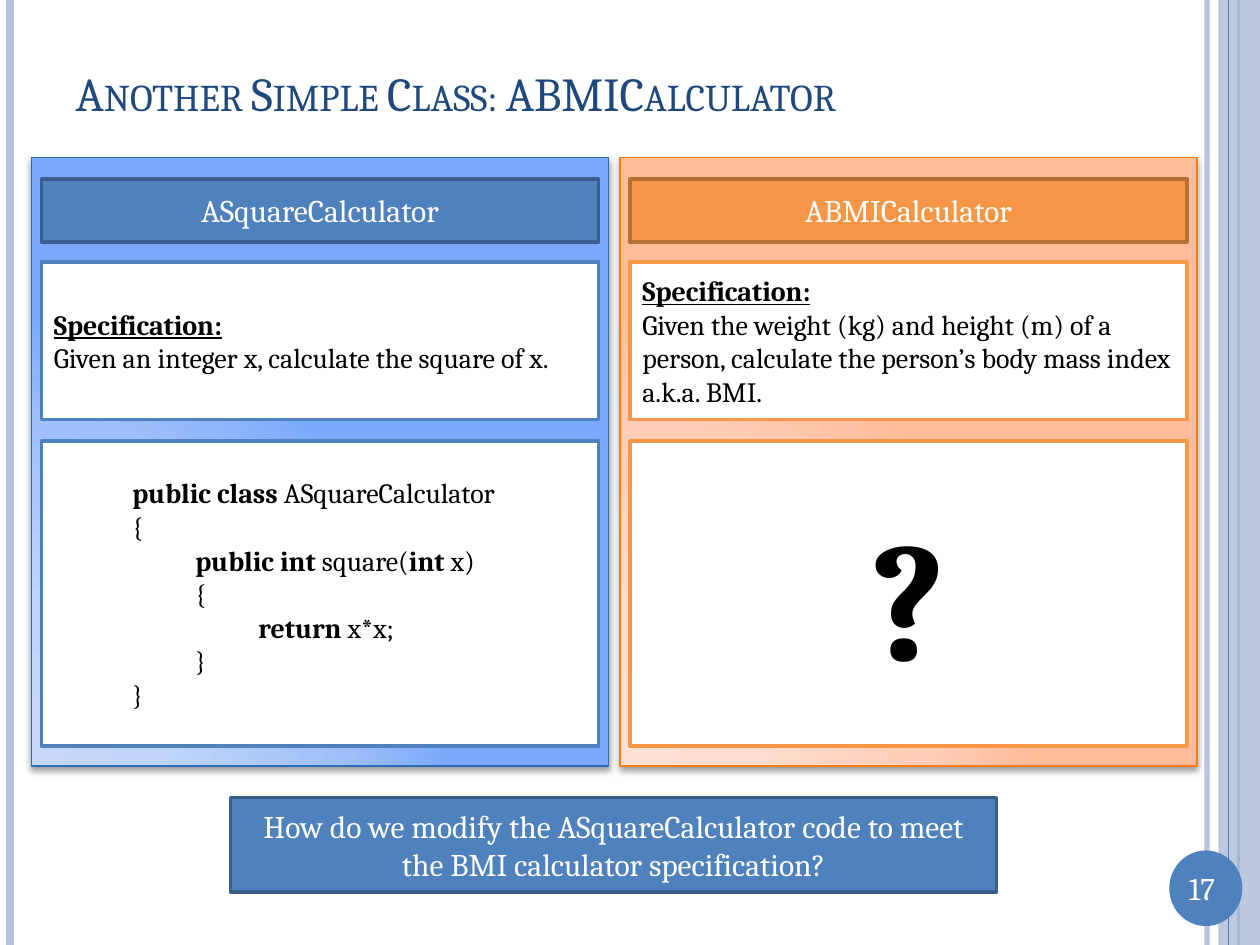
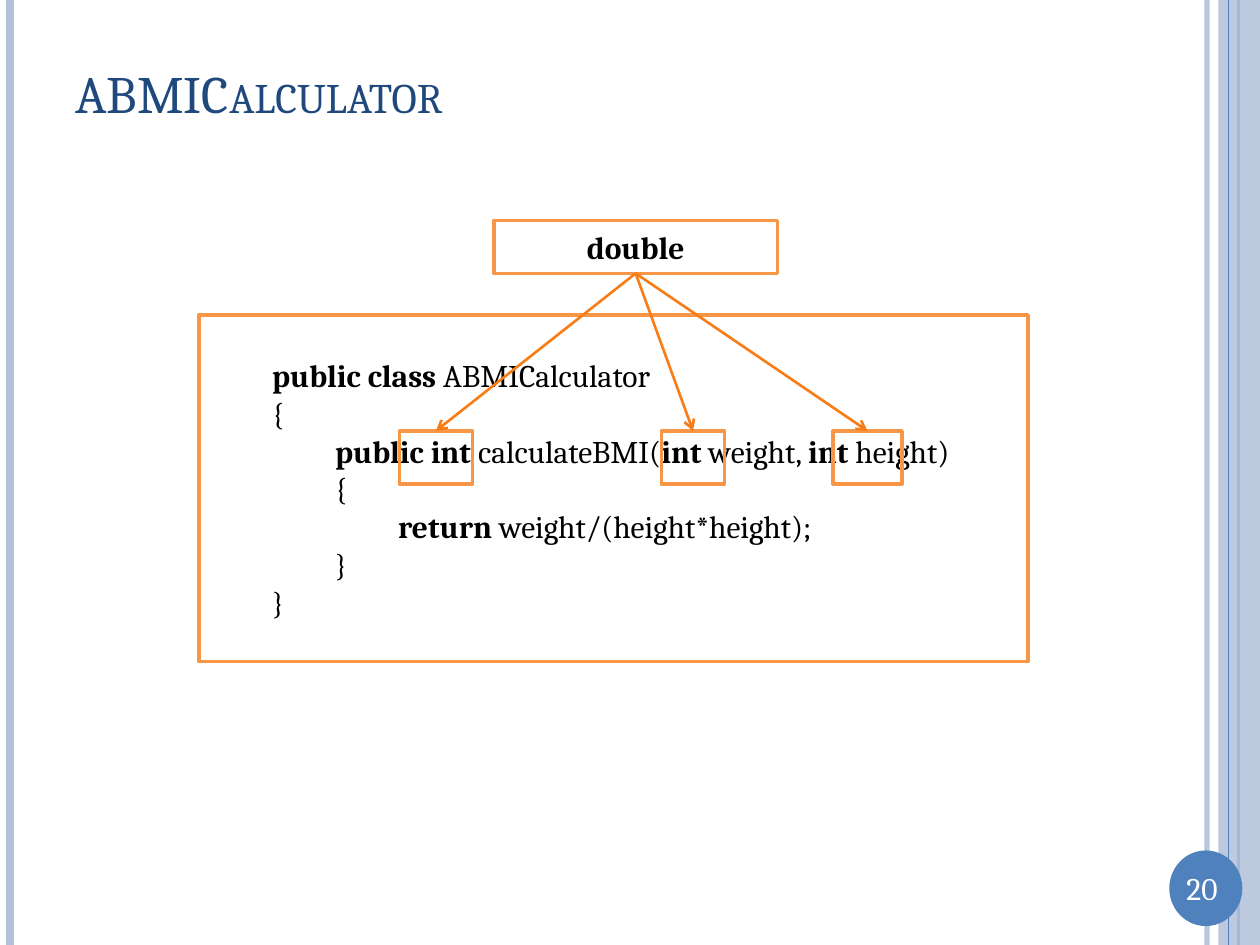
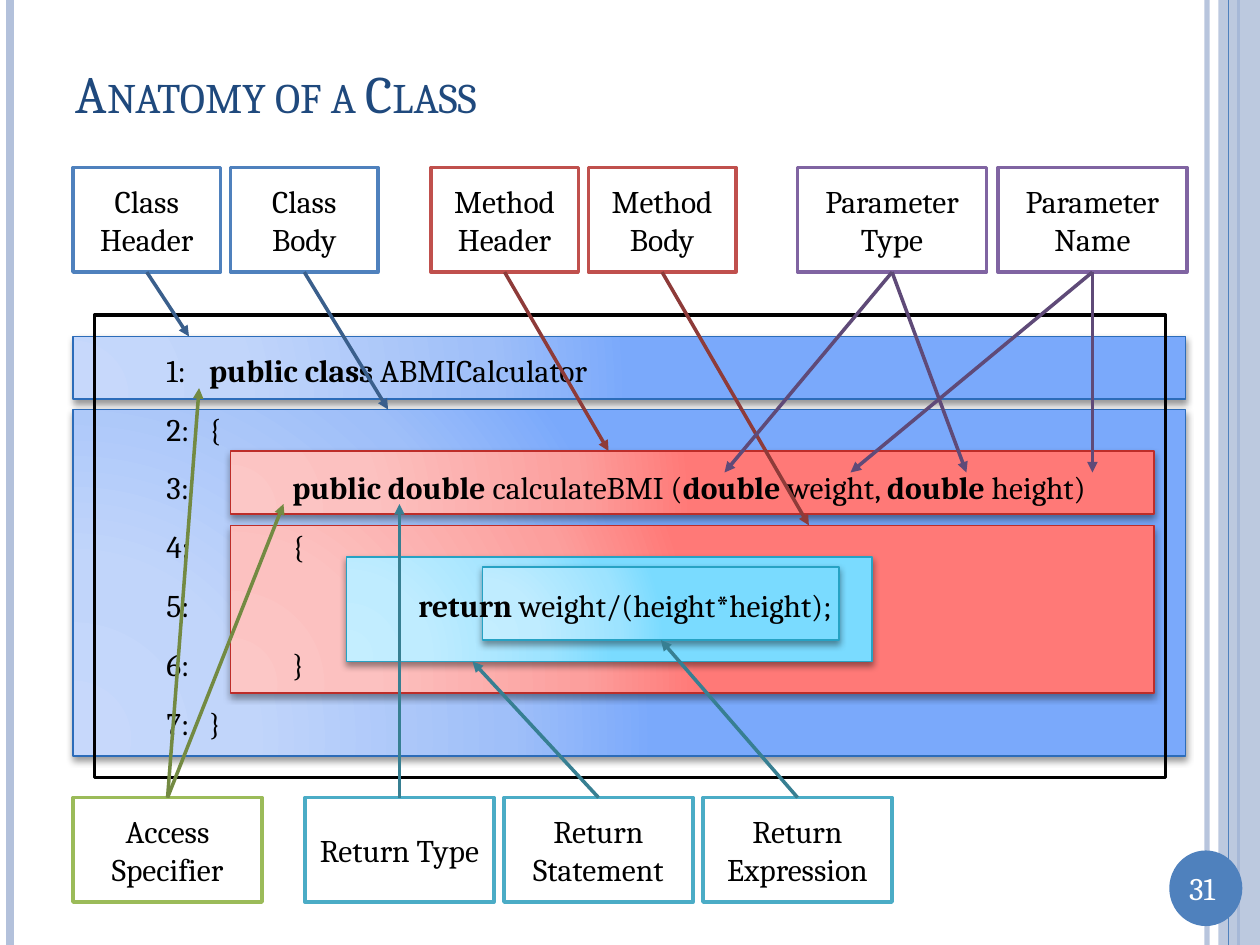
from lxml import etree
from pptx import Presentation
from pptx import util as u
from pptx.dml.color import RGBColor
from pptx.enum import shapes, text
from pptx.oxml import parse_xml
from pptx.oxml.ns import nsdecls, qn


class Theme:
    font = "Cambria"
    black, white = "000000", "FFFFFF"
    title, band = "1F497D", "B3C1DB"
    blue, blue_dark = "4F81BD", "3A5F8C"
    orange, orange_dark, orange_arrow = "F79646", "B76F34", "F97D16"
    red, red_dark = "C0504D", "8E3B39"
    purple, purple_dark = "8064A2", "5F4A78"
    green, green_dark = "9BBB59", "738A42"
    teal, teal_dark = "4BACC6", "377F92"
    gloss_blue = (("C7D8FB", "C1D5FA", "9FBFF9", "7AA9FB"), "2C6CB9")
    gloss_orange = (("FFE0D3", "FFDDCF", "FFCCB5", "FFBC99"), "F97D16")
    gloss_red = (("FCC7C6", "FCC1C0", "FC9F9D", "FF7977"), "BD2D29")
    gloss_teal = (("C4EEFF", "BFECFF", "9DE3FF", "7ADBFF"), "26A2C4")
    body, small, huge = 18, 16, 96
    border = 2


BAND_LINES = [(9.58, Theme.band, 3, 93), (0.08, Theme.band, 4.5, 100),
              (9.83, Theme.blue, 1.5, 100), (9.75, Theme.blue, 0.75, 100)]

SQUARE_CODE = [
    (0, "**public class** ASquareCalculator"), (0, "{"),
    (0.5, "**public int** square(**int** x)"), (0.5, "{"),
    (1, "**return** x*x;"), (0.5, "}"), (0, "}")]
BMI_CODE = [
    (0, "**public class** ABMICalculator"), (0, "{"),
    (0.5, "**public int** calculateBMI(**int** weight, **int** height)"), (0.5, "{"),
    (1, "**return** weight/(height*height);"), (0.5, "}"), (0, "}")]
ANATOMY_CODE = [
    (0.34, "**public class** ABMICalculator"), (0.34, "{"),
    (1, "**public double** calculateBMI (**double** weight, **double** height)"), (1, "{"),
    (2, "**return** weight/(height*height);"), (1, "}"), (0.34, "}")]

PANELS = [
    (0.25, Theme.gloss_blue, Theme.blue, Theme.blue_dark, "ASquareCalculator",
     "Given an integer x, calculate the square of x."),
    (4.92, Theme.gloss_orange, Theme.orange, Theme.orange_dark, "ABMICalculator",
     "Given the weight (kg) and height (m) of a person, calculate the person’s "
     "body mass index a.k.a. BMI.")]
QUESTION = "How do we modify the ASquareCalculator code to meet the BMI calculator specification?"

TYPE_MARKERS = [(5.25, 0.5), (3.17, 0.58), (6.61, 0.55)]

ANATOMY_AREAS = [
    (0.58, 2.67, 8.83, 0.5, Theme.gloss_blue), (0.58, 3.25, 8.83, 2.75, Theme.gloss_blue),
    (1.83, 3.58, 7.33, 0.5, Theme.gloss_red), (1.83, 4.17, 7.33, 1.33, Theme.gloss_red),
    (2.75, 4.42, 4.17, 0.83, Theme.gloss_teal), (3.83, 4.5, 2.83, 0.58, Theme.gloss_teal)]
TOP, BOTTOM = 1.33, 6.33
ANATOMY_LABELS = [
    ("Class Header", 0.58, TOP, 1.17, Theme.blue, Theme.blue_dark, [(1.5, 2.67)]),
    ("Class Body", 1.83, TOP, 1.17, Theme.blue, Theme.blue_dark, [(3.08, 3.25)]),
    ("Method Header", 3.42, TOP, 1.17, Theme.red, Theme.red_dark, [(4.83, 3.58)]),
    ("Method Body", 4.67, TOP, 1.17, Theme.red, Theme.red_dark, [(6.42, 4.17)]),
    ("Parameter Type", 6.33, TOP, 1.5, Theme.purple, Theme.purple_dark,
     [(5.75, 3.75), (7.67, 3.75)]),
    ("Parameter Name", 7.92, TOP, 1.5, Theme.purple, Theme.purple_dark,
     [(8.67, 3.75), (6.75, 3.75)]),
    ("Access Specifier", 0.58, BOTTOM, 1.5, Theme.green, Theme.green_dark,
     [(1.58, 3.08), (2.25, 4)]),
    ("Return Type", 2.42, BOTTOM, 1.5, Theme.teal, Theme.teal_dark, [(3.17, 4)]),
    ("Return Statement", 4, BOTTOM, 1.5, Theme.teal, Theme.teal_dark, [(3.75, 5.25)]),
    ("Return Expression", 5.58, BOTTOM, 1.5, Theme.teal, Theme.teal_dark, ["expression"])]


def rgb(color):
    return RGBColor.from_string(color)


def inches(*lengths):
    return [u.Inches(length) for length in lengths]


def set_opacity(parent, percent):
    color = next(parent.iter(qn("a:srgbClr")))
    etree.SubElement(color, qn("a:alpha"), val=str(percent * 1000))


def style_paragraph(paragraph, size, color, align=text.PP_ALIGN.LEFT):
    paragraph.alignment = align
    paragraph.font.name = Theme.font
    paragraph.font.size = u.Pt(size)
    paragraph.font.color.rgb = rgb(color)


def add_marked_runs(paragraph, content):
    for index, part in enumerate(content.split("**")):
        if part:
            run = paragraph.add_run()
            run.text = part
            if index % 2:
                run.font.bold = True


def write(shape, lines, size=Theme.body, color=Theme.black, align=text.PP_ALIGN.CENTER):
    frame = shape.text_frame
    frame.word_wrap = True
    frame.vertical_anchor = text.MSO_ANCHOR.MIDDLE
    for index, line in enumerate(lines):
        paragraph = frame.add_paragraph() if index else frame.paragraphs[0]
        add_marked_runs(paragraph, line)
        style_paragraph(paragraph, size, color, align)
    return frame.paragraphs


def write_code(shape, code, size, left_margin):
    paragraphs = write(shape, [line for _, line in code], size, align=text.PP_ALIGN.LEFT)
    shape.text_frame.margin_left = u.Inches(left_margin)
    for paragraph, (indent, _) in zip(paragraphs, code):
        properties = paragraph._p.get_or_add_pPr()
        properties.set("marL", str(u.Inches(indent)))
        properties.set("indent", "0")


def write_numbered_code(shape, code, left_margin):
    lines = [f"{number}:\t{line}" for number, (_, line) in enumerate(code, 1)]
    paragraphs = write(shape, lines, align=text.PP_ALIGN.LEFT)
    shape.text_frame.margin_left = u.Inches(left_margin)
    for index, (paragraph, (stop, _)) in enumerate(zip(paragraphs, code)):
        if index:
            paragraph.space_before = u.Pt(12)
        tabs = parse_xml(f'<a:tabLst {nsdecls("a")}><a:tab pos="{u.Inches(stop)}" algn="l"/></a:tabLst>')
        paragraph._p.pPr.find(qn("a:defRPr")).addprevious(tabs)


def add_box(slide, left, top, width, height, fill=None, line=None,
            kind=shapes.MSO_SHAPE.RECTANGLE, weight=Theme.border):
    shape = slide.shapes.add_shape(kind, *inches(left, top, width, height))
    shape.shadow.inherit = False
    if fill:
        shape.fill.solid()
        shape.fill.fore_color.rgb = rgb(fill)
    else:
        shape.fill.background()
    if line:
        shape.line.color.rgb = rgb(line)
        shape.line.width = u.Pt(weight)
    else:
        shape.line.fill.background()
    return shape


def add_glossy_box(slide, left, top, width, height, gloss):
    colors, line = gloss
    shape = add_box(slide, left, top, width, height, colors[0], line, weight=1)
    stops = "".join(f'<a:gs pos="{position * 1000}"><a:srgbClr val="{color}"/></a:gs>'
                    for position, color in zip((0, 30, 75, 100), colors))
    gradient = parse_xml(
        f'<a:gradFill {nsdecls("a")} rotWithShape="1"><a:gsLst>{stops}</a:gsLst>'
        '<a:path path="circle"><a:fillToRect l="5000" t="100000" r="120000" b="10000"/>'
        '</a:path></a:gradFill>')
    properties = shape._element.spPr
    properties.replace(properties.find(qn("a:solidFill")), gradient)
    properties.find(qn("a:effectLst")).append(parse_xml(
        f'<a:outerShdw {nsdecls("a")} blurRad="{u.Pt(4)}" dist="{u.Pt(2)}" dir="5400000" '
        'rotWithShape="0"><a:srgbClr val="000000"><a:alpha val="40000"/></a:srgbClr></a:outerShdw>'))
    return shape


def add_line(slide, start, end, color, weight, head=None):
    connector = slide.shapes.add_connector(shapes.MSO_CONNECTOR.STRAIGHT, *inches(*start, *end))
    connector.line.color.rgb = rgb(color)
    connector.line.width = u.Pt(weight)
    properties = connector._element.spPr
    if head:
        etree.SubElement(properties.find(qn("a:ln")), qn("a:tailEnd"), type=head)
    etree.SubElement(properties, qn("a:effectLst"))
    return connector


def decorate_layout(slide, layout):
    lines = []
    for left, color, weight, opacity in BAND_LINES:
        line = add_line(slide, (left, 0), (left, 7.5), color, weight)
        if opacity < 100:
            set_opacity(line._element.spPr, opacity)
        lines.append(line)
    band = add_box(slide, 9.67, 0, 0.33, 7.5, Theme.band)
    set_opacity(band._element.spPr, 87)
    badge = add_box(slide, 9.28, 6.75, 0.58, 0.6, Theme.blue, kind=shapes.MSO_SHAPE.OVAL)
    for shape in (*lines[:3], band, lines[3], badge):
        layout.shapes._spTree.append(shape._element)


def add_slide(presentation, title, number, title_size=30):
    layout = presentation.slide_layouts[5]
    slide = presentation.slides.add_slide(layout)
    if len(presentation.slides) == 1:
        decorate_layout(slide, layout)
    heading = slide.shapes.title
    heading.left, heading.top, heading.width, heading.height = inches(0.5, 0.3, 8.67, 0.87)
    paragraph = write(heading, [title], title_size, Theme.title, text.PP_ALIGN.LEFT)[0]
    heading.text_frame.auto_size = text.MSO_AUTO_SIZE.NONE
    paragraph.runs[0].font._rPr.set("cap", "small")
    page = slide.shapes.add_textbox(*inches(9.25, 6.85, 0.58, 0.4))
    write(page, [str(number)], color=Theme.white)
    return slide


def build_comparison(presentation):
    slide = add_slide(presentation, "Another Simple Class: ABMICalculator", 17, 27)
    code_boxes = []
    for left, gloss, color, dark, name, specification in PANELS:
        add_glossy_box(slide, left, 1.25, 4.58, 4.83, gloss)
        inner = left + 0.08
        write(add_box(slide, inner, 1.42, 4.42, 0.5, color, dark), [name], color=Theme.white)
        box = add_box(slide, inner, 2.08, 4.42, 1.25, Theme.white, color)
        heading = write(box, ["**Specification:**", specification], Theme.small,
                        align=text.PP_ALIGN.LEFT)[0]
        heading.runs[0].font.underline = True
        code_boxes.append(add_box(slide, inner, 3.5, 4.42, 2.42, Theme.white, color))
    write_code(code_boxes[0], SQUARE_CODE, Theme.small, 0.72)
    write(code_boxes[1], ["**?**"], Theme.huge)
    question = add_box(slide, 1.83, 6.33, 6.08, 0.75, Theme.blue, Theme.blue_dark)
    write(question, [QUESTION], color=Theme.white)


def build_type_change(presentation):
    slide = add_slide(presentation, "ABMICalculator", 20)
    code_box = add_box(slide, 1.58, 2.5, 6.58, 2.75, Theme.white, Theme.orange)
    write_code(code_box, BMI_CODE, Theme.body, 0.58)
    new_type = add_box(slide, 3.92, 1.75, 2.25, 0.42, line=Theme.orange)
    write(new_type, ["**double**"])
    for left, width in TYPE_MARKERS:
        marker = add_box(slide, left, 3.42, width, 0.42, line=Theme.orange)
        arrow = add_line(slide, (5.04, 2.17), (left + width / 2, 3.42),
                         Theme.orange_arrow, 1.5, "arrow")
        arrow.begin_connect(new_type, 2)
        arrow.end_connect(marker, 0)


def build_anatomy(presentation):
    slide = add_slide(presentation, "Anatomy of a Class", 31)
    areas = [add_glossy_box(slide, *area) for area in ANATOMY_AREAS]
    code_box = add_box(slide, 0.75, 2.5, 8.5, 3.67, line=Theme.black)
    write_numbered_code(code_box, ANATOMY_CODE, 0.57)
    for name, left, top, width, color, dark, targets in ANATOMY_LABELS:
        label = add_box(slide, left, top, width, 0.83, Theme.white, color)
        write(label, [name])
        start = (left + width / 2, top + 0.83 if top == TOP else top)
        for target in targets:
            to_expression = target == "expression"
            end = (5.25, 5.08) if to_expression else target
            arrow = add_line(slide, start, end, dark, 2, "triangle")
            arrow.begin_connect(label, 2 if top == TOP else 0)
            if to_expression:
                arrow.end_connect(areas[-1], 2)


def main():
    presentation = Presentation()
    presentation.slide_width, presentation.slide_height = inches(10, 7.5)
    build_comparison(presentation)
    build_type_change(presentation)
    build_anatomy(presentation)
    presentation.save("out.pptx")


if __name__ == "__main__":
    main()
